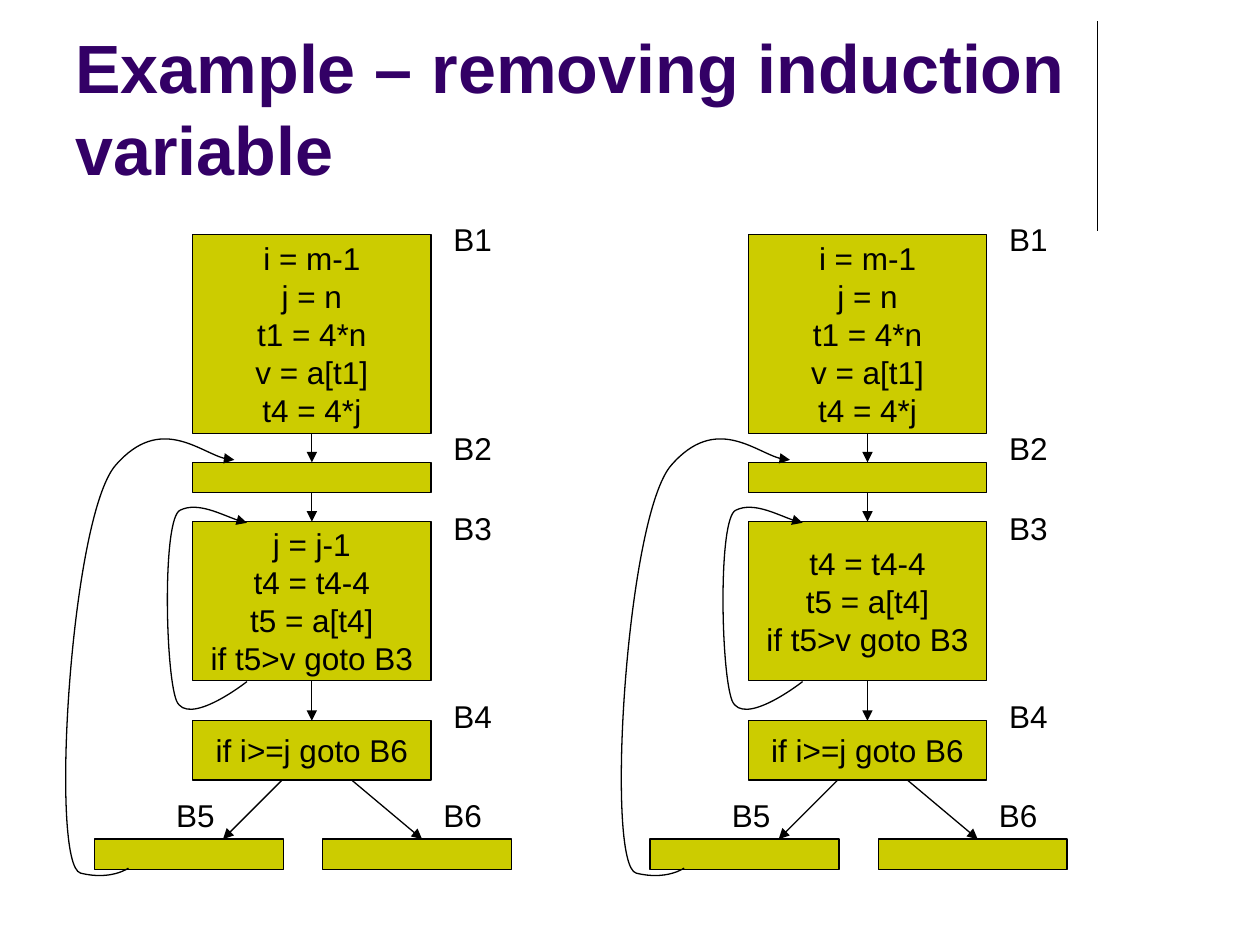
from lxml import etree
from pptx import Presentation
from pptx.dml.color import RGBColor
from pptx.enum.shapes import MSO_CONNECTOR, MSO_SHAPE
from pptx.enum.text import MSO_ANCHOR, MSO_AUTO_SIZE, PP_ALIGN
from pptx.oxml.ns import qn
from pptx.util import Inches, Pt

STRAIGHT = MSO_CONNECTOR.STRAIGHT
RECTANGLE = MSO_SHAPE.RECTANGLE
MIDDLE, BOTTOM = MSO_ANCHOR.MIDDLE, MSO_ANCHOR.BOTTOM
CENTER = PP_ALIGN.CENTER
GROW = MSO_AUTO_SIZE.SHAPE_TO_FIT_TEXT
color = RGBColor.from_string

BLACK, OLIVE, PURPLE = "000000", "CCCC00", "330066"
GRAPH_LEFTS = (0, 4.41)
BLOCK_LEFT, BLOCK_WIDTH = 1.53, 1.89
LABEL_LEFT = 3.5
START_CODE = ["i = m-1", "j = n", "t1 = 4*n", "v = a[t1]", "t4 = 4*j"]
LOOP_CODE = ["t4 = t4-4", "t5 = a[t4]", "if t5>v goto B3"]
LOOP_CODES = (["j = j-1"] + LOOP_CODE, LOOP_CODE)
LABELS = [
    ("B1", LABEL_LEFT, 1.7), ("B2", LABEL_LEFT, 3.36), ("B3", LABEL_LEFT, 3.99),
    ("B4", LABEL_LEFT, 5.48), ("B5", 1.3, 6.27), ("B6", 3.42, 6.27),
]
BRANCHES = [((2.24, 6.19), (1.77, 6.66)), ((2.79, 6.19), (3.35, 6.66))]
# A start point, then three Bézier points for each curve segment
BACK_EDGES = [
    [(1.96, 5.41), (1.96, 5.41), (1.49, 5.78), (1.4, 5.56), (1.31, 5.32),
     (1.29, 4.11), (1.43, 4.05), (1.57, 3.98), (1.85, 4.13), (1.96, 4.15)],
    [(1.02, 6.89), (1.02, 6.89), (0.88, 6.99), (0.64, 6.93), (0.39, 6.87),
     (0.56, 4.09), (0.92, 3.69), (1.27, 3.29), (1.67, 3.66), (1.86, 3.65)],
]


def style_line(shape, arrow=True):
    """Give a thin black line without shadow, with an arrowhead at its end if asked."""
    shape.line.color.rgb = color(BLACK)
    shape.line.width = Pt(0.75)
    properties = shape._element.spPr
    if properties.find(qn("a:effectLst")) is None:
        etree.SubElement(properties, qn("a:effectLst"))
    if arrow:
        etree.SubElement(properties.find(qn("a:ln")), qn("a:tailEnd"), type="triangle")


def write_lines(shape, lines, size=18, hue=BLACK, align=None):
    frame = shape.text_frame
    frame.text = "\n".join(lines)
    for para in frame.paragraphs:
        para.alignment = align
        para.font.name = "Arial"
        para.font.size = Pt(size)
        para.font.color.rgb = color(hue)


deck = Presentation()
deck.slide_width, deck.slide_height = Inches(10), Inches(7.5)
page = deck.slides.add_slide(deck.slide_layouts[6])
shapes = page.shapes

rule = shapes.add_connector(STRAIGHT, Inches(8.71), Inches(0.17), Inches(8.71), Inches(1.83))
style_line(rule, arrow=False)

title = shapes.add_textbox(Inches(0.5), Inches(0.13), Inches(8.25), Inches(1.42))
title.text_frame.word_wrap = True
title.text_frame.vertical_anchor = BOTTOM
write_lines(title, ["Example – removing induction variable"], 39, PURPLE)
title.text_frame.paragraphs[0].font.bold = True

for graph_left, loop_code in zip(GRAPH_LEFTS, LOOP_CODES):
    blocks = []
    for left, top, width, height, code in [
        (BLOCK_LEFT, 1.86, BLOCK_WIDTH, 1.58, START_CODE),
        (BLOCK_LEFT, 3.67, BLOCK_WIDTH, 0.24, []),
        (BLOCK_LEFT, 4.14, BLOCK_WIDTH, 1.26, loop_code),
        (BLOCK_LEFT, 5.72, BLOCK_WIDTH, 0.47, ["if i>=j goto B6"]),
        (0.75, 6.66, 1.5, 0.24, []),
        (2.56, 6.66, 1.5, 0.24, []),
    ]:
        block = shapes.add_shape(RECTANGLE, Inches(graph_left + left), Inches(top),
                                 Inches(width), Inches(height))
        block.shadow.inherit = False
        block.fill.solid()
        block.fill.fore_color.rgb = color(OLIVE)
        style_line(block, arrow=False)
        if code:
            block.text_frame.word_wrap = False
            block.text_frame.vertical_anchor = MIDDLE
            write_lines(block, code, align=CENTER)
        blocks.append(block)

    for upper, lower in zip(blocks[:3], blocks[1:4]):
        arrow = shapes.add_connector(STRAIGHT, 0, 0, 0, 0)
        arrow.begin_connect(upper, 2)
        arrow.end_connect(lower, 0)
        style_line(arrow)

    for (x1, y1), (x2, y2) in BRANCHES:
        branch = shapes.add_connector(STRAIGHT, Inches(graph_left + x1), Inches(y1),
                                      Inches(graph_left + x2), Inches(y2))
        style_line(branch)

    for name, left, top in LABELS:
        label = shapes.add_textbox(Inches(graph_left + left), Inches(top),
                                   Inches(0.51), Inches(0.4))
        label.text_frame.word_wrap = False
        label.text_frame.auto_size = GROW
        write_lines(label, [name])

    for edge in BACK_EDGES:
        points = [(Inches(graph_left + x), Inches(y)) for x, y in edge]
        builder = shapes.build_freeform(*points[0])
        builder.add_line_segments(points[1:], close=False)
        curve = builder.convert_to_shape()
        curve.shadow.inherit = False
        curve.fill.background()
        style_line(curve)
        # Turn every three straight segments into one Bézier segment
        outline = next(curve._element.iter(qn("a:path")))
        segments = outline.findall(qn("a:lnTo"))
        for first in range(0, len(segments), 3):
            bezier = etree.SubElement(outline, qn("a:cubicBezTo"))
            for segment in segments[first:first + 3]:
                bezier.append(segment[0])
                outline.remove(segment)

deck.save("out.pptx")
